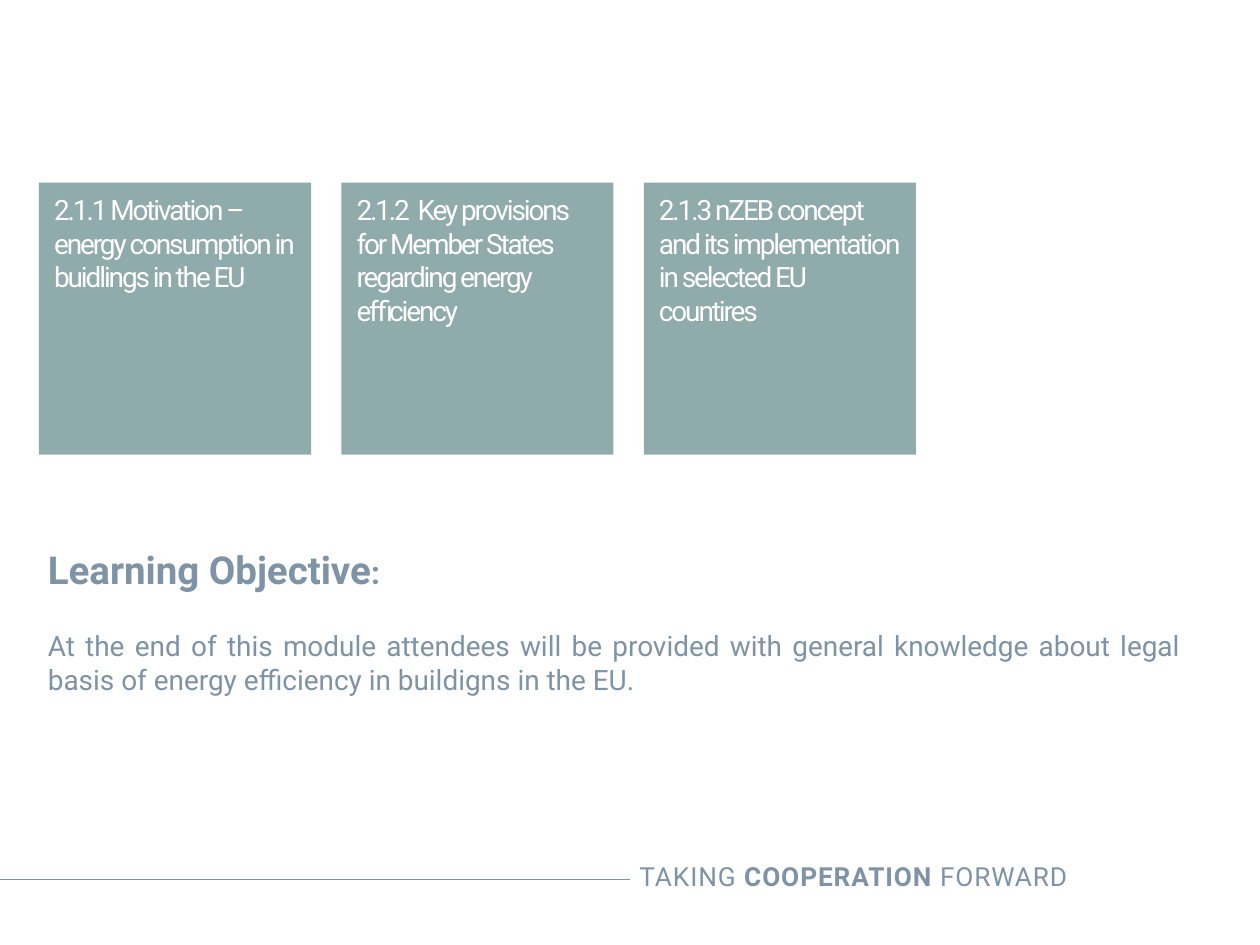
from lxml.etree import SubElement
from pptx import Presentation
from pptx.dml.color import RGBColor
from pptx.enum.shapes import MSO_CONNECTOR, MSO_SHAPE
from pptx.enum.text import MSO_ANCHOR, PP_ALIGN
from pptx.oxml.ns import qn
from pptx.util import Inches, Pt

COLORS = {"card": "90ABAB", "slate": "7E93A5", "white": "FFFFFF"}
COLUMNS, ROWS = 100, 75
CARD_SIZE, CARD_PITCH = 21.6, 24
CARD_LEFT, CARD_TOP = 3.1, 14.5
CARD_TEXTS = [
    "2.1.1 Motivation – energy consumption in buidlings in the EU",
    "2.1.2  Key provisions for Member States regarding energy efficiency",
    "2.1.3 nZEB concept and its implementation in selected EU countires",
]


class ModuleSlide:
    """Draws styled elements on one slide, placed in grid columns and rows."""

    font_name = "Roboto"

    def __init__(self, presentation):
        self.column = presentation.slide_width / COLUMNS
        self.row = presentation.slide_height / ROWS
        self.slide = presentation.slides.add_slide(presentation.slide_layouts[6])

    def place(self, left, top, width, height):
        return (int(left * self.column), int(top * self.row),
                int(width * self.column), int(height * self.row))

    def color(self, name):
        return RGBColor.from_string(COLORS[name])

    def frame(self, shape, margins):
        text_frame = shape.text_frame
        text_frame.word_wrap = True
        text_frame.vertical_anchor = MSO_ANCHOR.TOP
        (text_frame.margin_left, text_frame.margin_top,
         text_frame.margin_right, text_frame.margin_bottom) = map(Inches, margins)
        return text_frame

    def style(self, run, size, color="slate", bold=False, spacing=0):
        run.font.name = self.font_name
        run.font.size = Pt(size)
        run.font.bold = bold
        run.font.color.rgb = self.color(color)
        if spacing:
            run.font._element.set("spc", str(round(spacing * 100)))

    def line(self, start, end, row):
        left, top, right, bottom = self.place(start, row, end, row)
        connector = self.slide.shapes.add_connector(
            MSO_CONNECTOR.STRAIGHT, left, top, right, bottom)
        connector.line.color.rgb = self.color("slate")
        connector.line.width = Pt(0.75)
        SubElement(connector._element.spPr, qn("a:effectLst"))

    def card(self, left, top, text):
        shape = self.slide.shapes.add_shape(
            MSO_SHAPE.RECTANGLE, *self.place(left, top, CARD_SIZE, CARD_SIZE))
        shape.shadow.inherit = False
        shape.fill.solid()
        shape.fill.fore_color.rgb = self.color("card")
        shape.line.fill.background()
        text_frame = self.frame(shape, (0.12, 0.08, 0.12, 0.12))
        text_frame.text = text
        paragraph = text_frame.paragraphs[0]
        paragraph.alignment = PP_ALIGN.LEFT
        self.style(paragraph.runs[0], 16, "white", spacing=-1.2)

    def text(self, box, margins, alignment, paragraphs, gap=0, spacing=0):
        shape = self.slide.shapes.add_textbox(*self.place(*box))
        text_frame = self.frame(shape, margins)
        for index, parts in enumerate(paragraphs):
            paragraph = text_frame.add_paragraph() if index else text_frame.paragraphs[0]
            paragraph.alignment = alignment
            if index:
                paragraph.space_before = Pt(gap)
            for words, size, bold in parts:
                run = paragraph.add_run()
                run.text = words
                self.style(run, size, bold=bold, spacing=spacing)


def main():
    presentation = Presentation()
    presentation.slide_width, presentation.slide_height = Inches(10), Inches(7.5)
    module = ModuleSlide(presentation)

    module.line(0, 50, 69.8)
    module.text((38.8, 67.8, 46.9, 3.5), (0.1, 0.05, 0.1, 0.05), PP_ALIGN.RIGHT,
                [[("TAKING ", 15, False), ("COOPERATION", 15, True),
                  (" FORWARD", 15, False)]], spacing=0.5)

    for index, text in enumerate(CARD_TEXTS):
        module.card(CARD_LEFT + index * CARD_PITCH, CARD_TOP, text)

    objective = ("At the end of this module attendees will be provided with general "
                 "knowledge about legal basis of energy efficiency in buildigns in the EU.")
    module.text((3, 42.9, 91.5, 13), (0.08, 0.04, 0.08, 0.04), PP_ALIGN.JUSTIFY,
                [[("Learning Objective", 22, True), (":", 18, True)],
                 [(objective, 16, False)]], gap=21)

    presentation.save("out.pptx")


if __name__ == "__main__":
    main()
